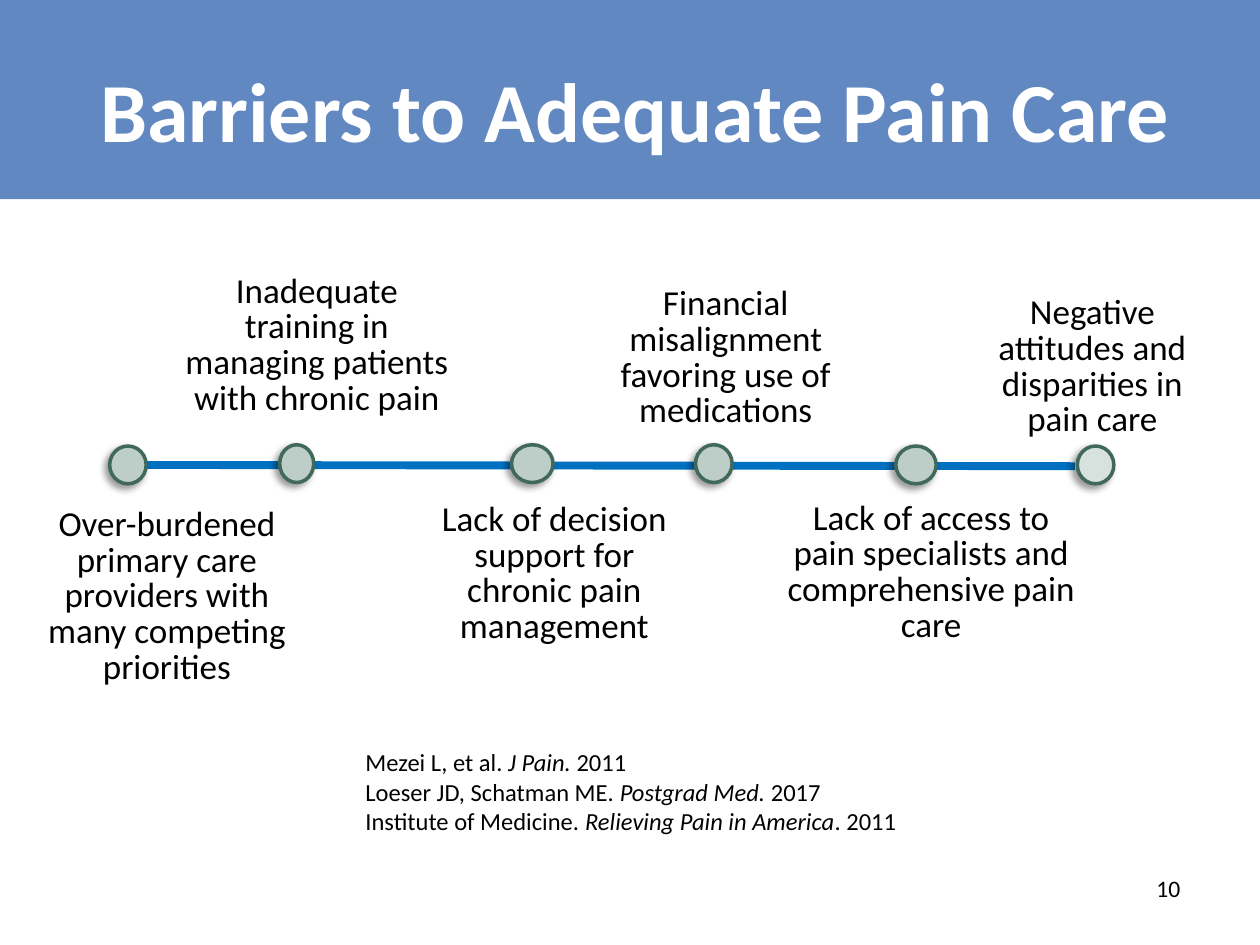
from dataclasses import dataclass

from lxml.etree import SubElement
from pptx import Presentation
from pptx.dml.color import RGBColor
from pptx.enum.shapes import MSO_CONNECTOR, MSO_SHAPE
from pptx.enum.text import MSO_ANCHOR, MSO_AUTO_SIZE, PP_ALIGN
from pptx.oxml.ns import qn
from pptx.util import Emu, Pt


@dataclass(frozen=True)
class Theme:
    font: str = "Calibri"
    banner: str = "6188C1"
    title: str = "FFFFFF"
    text: str = "000000"
    axis: str = "0070C0"
    marker: str = "BDCDC7"
    last_marker: str = "D7E1DD"
    marker_line: str = "41695B"
    title_size: float = 48
    label_size: float = 20
    source_size: float = 14
    number_size: float = 13.5


THEME = Theme()
PX = 9144  # EMU in one px, 100 px to the inch

# Marker box, label box and label of each barrier, left to right
BARRIERS = [
    ((87, 354, 29, 30), (33, 403, 199, 143),
     "Over-burdened primary care providers with many competing priorities"),
    ((222, 353, 27, 30), (146, 218, 211, 115),
     "Inadequate training in managing patients with chronic pain"),
    ((406, 353, 33, 30), (341, 399, 198, 115),
     "Lack of decision support for chronic pain management"),
    ((552, 353, 29, 30), (489, 228, 174, 115),
     "Financial misalignment favoring use of medications"),
    ((711, 354, 32, 30), (623, 398, 232, 115),
     "Lack of access to pain specialists and comprehensive pain care"),
    ((855, 354, 29, 30), (780, 235, 174, 115),
     "Negative attitudes and disparities in pain care"),
]

# Plain text, italic text, plain text
SOURCES = [
    ("Mezei L, et al. ", "J Pain. ", "2011"),
    ("Loeser JD, Schatman ME. ", "Postgrad Med. ", "2017"),
    ("Institute of Medicine. ", "Relieving Pain in America", ". 2011"),
]


def px(*lengths):
    return [Emu(length * PX) for length in lengths]


def rgb(code):
    return RGBColor.from_string(code)


def style(span, size, color=THEME.text, bold=False, italic=False):
    span.font.name = THEME.font
    span.font.size = Pt(size)
    span.font.color.rgb = rgb(color)
    span.font.bold = bold
    span.font.italic = italic


def set_margins(frame, across, down):
    frame.margin_left = frame.margin_right = Emu(across * PX)
    frame.margin_top = frame.margin_bottom = Emu(down * PX)


def add_drop_shadow(shape):
    effects = SubElement(shape._element.spPr, qn("a:effectLst"))
    shadow = SubElement(effects, qn("a:outerShdw"), blurRad=str(Pt(4)),
                        dist=str(Pt(3)), dir=str(135 * 60000), rotWithShape="0")
    color = SubElement(shadow, qn("a:srgbClr"), val="000000")
    SubElement(color, qn("a:alpha"), val="40000")


def add_header(page, box):
    left, top, width, height = box
    title = page.shapes.title
    banner = page.shapes.add_shape(MSO_SHAPE.RECTANGLE, *px(*box))
    banner.shadow.inherit = False
    banner.fill.solid()
    banner.fill.fore_color.rgb = rgb(THEME.banner)
    banner.line.fill.background()
    title._element.addprevious(banner._element)  # banner behind the title

    title.left, title.top, title.width, title.height = px(
        left + 54, top + 24, width - 100, height - 33)
    frame = title.text_frame
    frame.text = "Barriers to Adequate Pain Care"
    frame.auto_size = MSO_AUTO_SIZE.NONE
    frame.vertical_anchor = MSO_ANCHOR.MIDDLE
    set_margins(frame, 9, 5)
    para = frame.paragraphs[0]
    para.alignment = PP_ALIGN.CENTER
    style(para.runs[0], THEME.title_size, THEME.title, bold=True)


def add_axis(page, start, end):
    axis = page.shapes.add_connector(MSO_CONNECTOR.STRAIGHT, *px(*start, *end))
    axis.line.color.rgb = rgb(THEME.axis)
    axis.line.width = Pt(4.5)
    SubElement(axis._element.spPr, qn("a:effectLst"))


def add_marker(page, box, fill):
    marker = page.shapes.add_shape(MSO_SHAPE.OVAL, *px(*box))
    marker.fill.solid()
    marker.fill.fore_color.rgb = rgb(fill)
    marker.line.color.rgb = rgb(THEME.marker_line)
    marker.line.width = Pt(2)
    add_drop_shadow(marker)


def add_label(page, box, text):
    frame = page.shapes.add_textbox(*px(*box)).text_frame
    frame.text = text
    frame.word_wrap = True
    set_margins(frame, 0, 0)
    para = frame.paragraphs[0]
    para.alignment = PP_ALIGN.CENTER
    para.line_spacing = 0.85
    style(para.runs[0], THEME.label_size)


def add_timeline(page):
    add_axis(page, (87, 369), (853, 370))
    for marker_box, label_box, text in BARRIERS:
        is_last = text == BARRIERS[-1][2]
        add_marker(page, marker_box,
                   THEME.last_marker if is_last else THEME.marker)
        add_label(page, label_box, text)


def add_sources(page, box):
    frame = page.shapes.add_textbox(*px(*box)).text_frame
    frame.word_wrap = False
    frame.vertical_anchor = MSO_ANCHOR.MIDDLE
    set_margins(frame, 7, 4)
    for index, source in enumerate(SOURCES):
        para = frame.add_paragraph() if index else frame.paragraphs[0]
        for position, text in enumerate(source):
            span = para.add_run()
            span.text = text
            style(span, THEME.source_size, italic=position == 1)


def add_page_number(page, box):
    frame = page.shapes.add_textbox(*px(*box)).text_frame
    frame.text = "10"
    frame.word_wrap = True
    style(frame.paragraphs[0].runs[0], THEME.number_size)


def main():
    deck = Presentation()
    deck.slide_width, deck.slide_height = px(1000, 750)
    page = deck.slides.add_slide(deck.slide_layouts[5])  # Title Only
    add_header(page, (0, 0, 1000, 158))
    add_timeline(page)
    add_sources(page, (283, 589, 442, 78))
    add_page_number(page, (908, 689, 75, 33))
    deck.save("out.pptx")


if __name__ == "__main__":
    main()
